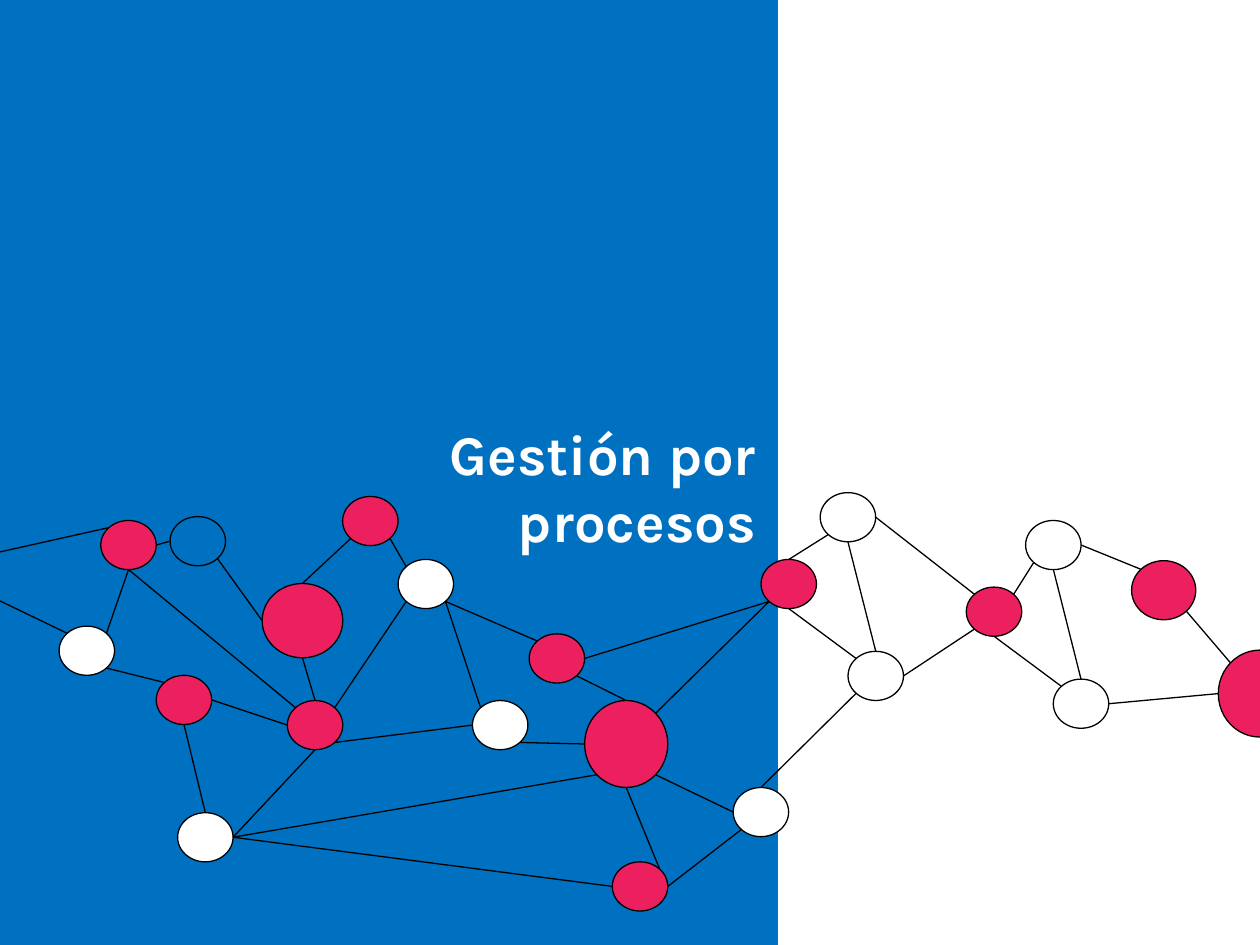
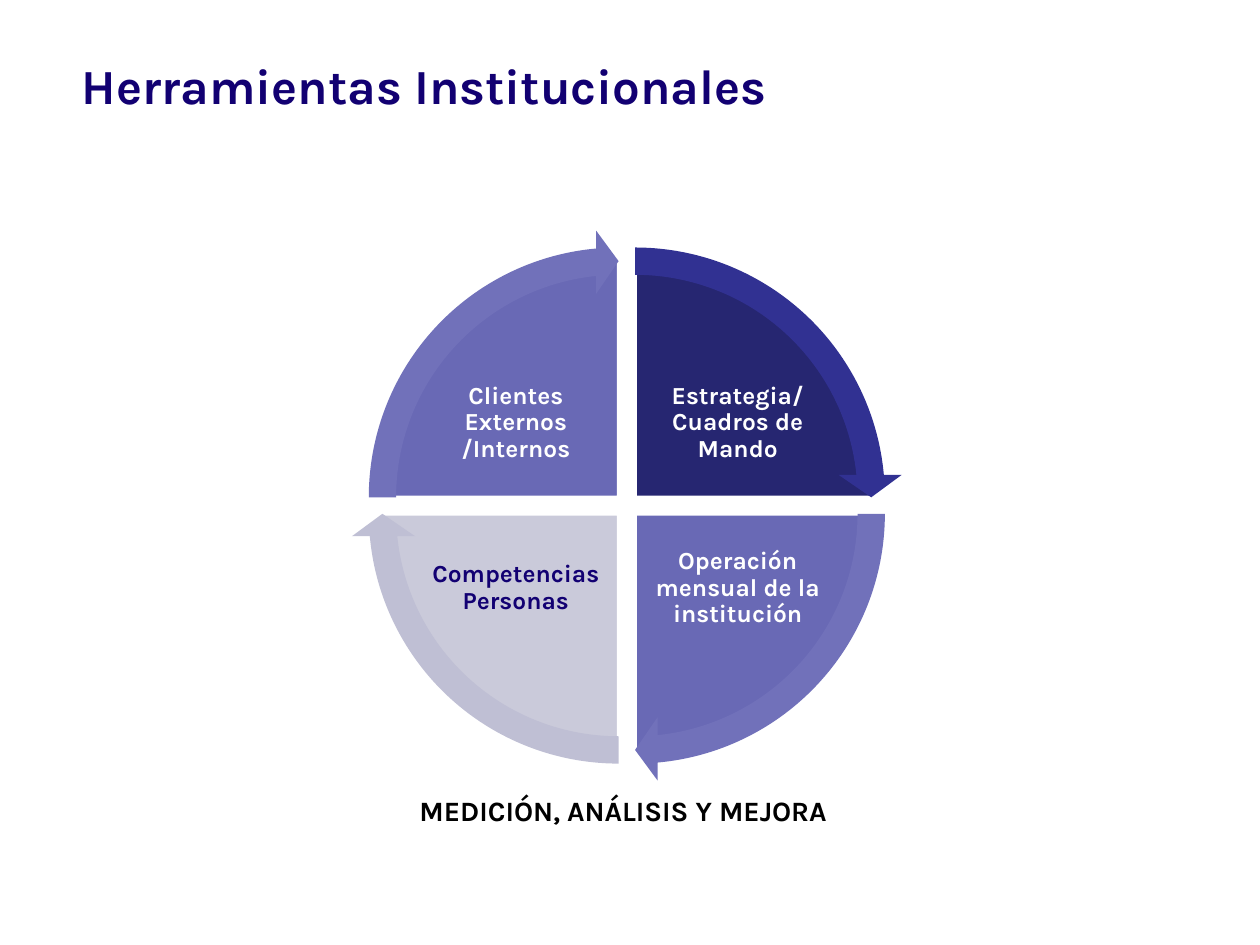
from dataclasses import dataclass
from math import cos, radians, sin

from lxml.etree import SubElement
from pptx import Presentation
from pptx.dml.color import RGBColor
from pptx.enum.shapes import MSO_CONNECTOR, MSO_SHAPE
from pptx.enum.text import MSO_ANCHOR, PP_ALIGN
from pptx.oxml.ns import qn
from pptx.util import Pt


@dataclass(frozen=True)
class Theme:
    font: str = "Karla"
    blue: str = "0070C0"
    pink: str = "EC205F"
    white: str = "FFFFFF"
    black: str = "000000"
    navy: str = "120072"
    cover_size: int = 32
    title_size: int = 28
    caption_size: int = 16
    label_size: int = 14
    thin: float = 0.75
    gap_line: float = 2


theme = Theme()


def add_shape(page, kind, frame, fill, line=None, width=theme.thin, adjustments=()):
    shape = page.shapes.add_shape(kind, *[Pt(value) for value in frame])
    shape.shadow.inherit = False
    for index, value in enumerate(adjustments):
        shape.adjustments[index] = value
    if fill:
        shape.fill.solid()
        shape.fill.fore_color.rgb = RGBColor.from_string(fill)
    else:
        shape.fill.background()
    if line:
        shape.line.color.rgb = RGBColor.from_string(line)
        shape.line.width = Pt(width)
    else:
        shape.line.fill.background()


def add_label(page, text, frame, size, color, align, anchor=MSO_ANCHOR.TOP, inset=None, spacing=None):
    box = page.shapes.add_textbox(*[Pt(value) for value in frame])
    box_text = box.text_frame
    box_text.word_wrap = True
    box_text.vertical_anchor = anchor
    if inset is not None:
        box_text.margin_left = box_text.margin_right = Pt(inset)
        box_text.margin_top = box_text.margin_bottom = Pt(inset)
    para = box_text.paragraphs[0]
    para.text = text
    para.alignment = align
    para.line_spacing = spacing
    para.font.name = theme.font
    para.font.size = Pt(size)
    para.font.bold = True
    para.font.color.rgb = RGBColor.from_string(color)


deck = Presentation()
deck.slide_width, deck.slide_height = Pt(720), Pt(540)
blank = deck.slide_layouts[6]

cover = deck.slides.add_slide(blank)
add_shape(cover, MSO_SHAPE.RECTANGLE, (0, 0, 444.2, 540), theme.blue, theme.blue)
add_label(cover, "Gestión por procesos", (129.6, 236.2, 309.6, 85),
          theme.cover_size, theme.white, PP_ALIGN.RIGHT)

small, medium, large, hub = (31.7, 28.1), (36.7, 33.8), (46.1, 42.5), (47.5, 49.7)
nodes = {
    "a": (57.6, 297.4, small, theme.pink),
    "b": (97.2, 295.2, small, None),
    "c": (419, 450, small, theme.white),
    "d": (33.8, 357.8, small, theme.white),
    "e": (149.8, 333.4, large, theme.pink),
    "f": (195.8, 283.7, small, theme.pink),
    "g": (227.5, 319.7, small, theme.white),
    "h": (101.5, 464.4, small, theme.white),
    "i": (164.2, 400.3, small, theme.pink),
    "j": (89.3, 385.9, small, theme.pink),
    "k": (349.9, 492.5, small, theme.pink),
    "l": (270, 400.3, small, theme.white),
    "m": (334.1, 400.3, hub, theme.pink),
    "n": (302.4, 362.2, small, theme.pink),
    "o": (434.9, 319.7, small, theme.pink),
    "p": (484.6, 372.2, small, theme.white),
    "q": (468.7, 281.5, small, theme.white),
    "r": (552.2, 335.5, small, theme.pink),
    "s": (601.9, 388.1, small, theme.white),
    "t": (586.1, 297.4, small, theme.white),
    "u": (696.2, 371.5, hub, theme.pink),
    "v": (646.6, 320.4, medium, theme.pink),
}
compass = {name: radians(45 * step)
           for step, name in enumerate(("E", "SE", "S", "SW", "W", "NW", "N", "NE"))}
sites = {("edge", "upper"): (0, 315.4), ("edge", "lower"): (0, 343.4)}
for node, (left, top, (width, height), fill) in nodes.items():
    add_shape(cover, MSO_SHAPE.OVAL, (left, top, width, height), fill, theme.black)
    for name, angle in compass.items():
        sites[node, name] = (left + width / 2 * (1 + cos(angle)),
                             top + height / 2 * (1 + sin(angle)))

links = (
    "e S i N", "i W j E", "j NW d SE", "d NE a S", "a E b W", "b SE e W",
    "e N f SW", "f SE g NW", "g SW i NE", "g SE n NW", "g SE l NW", "h E i S",
    "h N j S", "k NE m S", "h E k W", "m N n SE", "l SE m W", "m NE o SW",
    "o N q SW", "q S p N", "p NW o S", "c N p SW", "c W m SE", "k E c SW",
    "n E o SW", "i SE l W", "h E m SW", "i NW a S", "t S s N", "s NW r S",
    "p E r SW", "q E r NW", "r NE t SW", "t E v NW", "v SE u NW", "s E u W",
    "a NW edge upper", "d NW edge lower",
)
for link in links:
    first, first_site, second, second_site = link.split()
    ends = sites[first, first_site] + sites[second, second_site]
    connector = cover.shapes.add_connector(MSO_CONNECTOR.STRAIGHT, *[Pt(value) for value in ends])
    connector.line.color.rgb = RGBColor.from_string(theme.black)
    connector.line.width = Pt(theme.thin)
    SubElement(connector._element.spPr, qn("a:effectLst"))

tools = deck.slides.add_slide(blank)
add_label(tools, "Herramientas Institucionales", (39.6, 16.6, 612, 63.4),
          theme.title_size, theme.navy, PP_ALIGN.LEFT, MSO_ANCHOR.MIDDLE)

center_x, center_y = 358.2, 288.9
offset, pie_size, arrow_size = 4.7, 272.2, 306
label_dx, label_dy, label_width, label_height = 63.4, 47.2, 100.8, 74.2
quarter, arrow_sweep = 54, 50.725
quadrants = (
    ("Estrategia/ Cuadros de Mando", 1, -1, "262671", "313192", theme.white),
    ("Operación mensual de la institución", 1, 1, "6969B5", "7171BA", theme.white),
    ("Competencias Personas", -1, 1, "CACADA", "BFBFD4", theme.navy),
    ("Clientes Externos /Internos", -1, -1, "6969B5", "7171BA", theme.white),
)
arrows = []
for index, (text, side_x, side_y, pie_fill, arrow_fill, color) in enumerate(quadrants):
    start = (index + 3) % 4 * quarter
    middle_x, middle_y = center_x + side_x * offset, center_y + side_y * offset
    add_shape(tools, MSO_SHAPE.PIE,
              (middle_x - pie_size / 2, middle_y - pie_size / 2, pie_size, pie_size),
              pie_fill, theme.white, theme.gap_line, (start, (start + quarter) % (4 * quarter)))
    add_label(tools, text,
              (center_x + side_x * label_dx - label_width / 2,
               center_y + side_y * label_dy - label_height / 2, label_width, label_height),
              theme.label_size, color, PP_ALIGN.CENTER, MSO_ANCHOR.MIDDLE, 1.4, 0.9)
    arrows.append(((middle_x - arrow_size / 2, middle_y - arrow_size / 2, arrow_size, arrow_size),
                   arrow_fill, (0.051, 3.275, start + arrow_sweep, start, 0.059)))
for frame, fill, adjustments in arrows:
    add_shape(tools, MSO_SHAPE.CIRCULAR_ARROW, frame, fill, adjustments=adjustments)

add_label(tools, "MEDICIÓN, ANÁLISIS Y MEJORA", (146.2, 450, 419.8, 26.6),
          theme.caption_size, theme.black, PP_ALIGN.CENTER)

deck.save("out.pptx")
